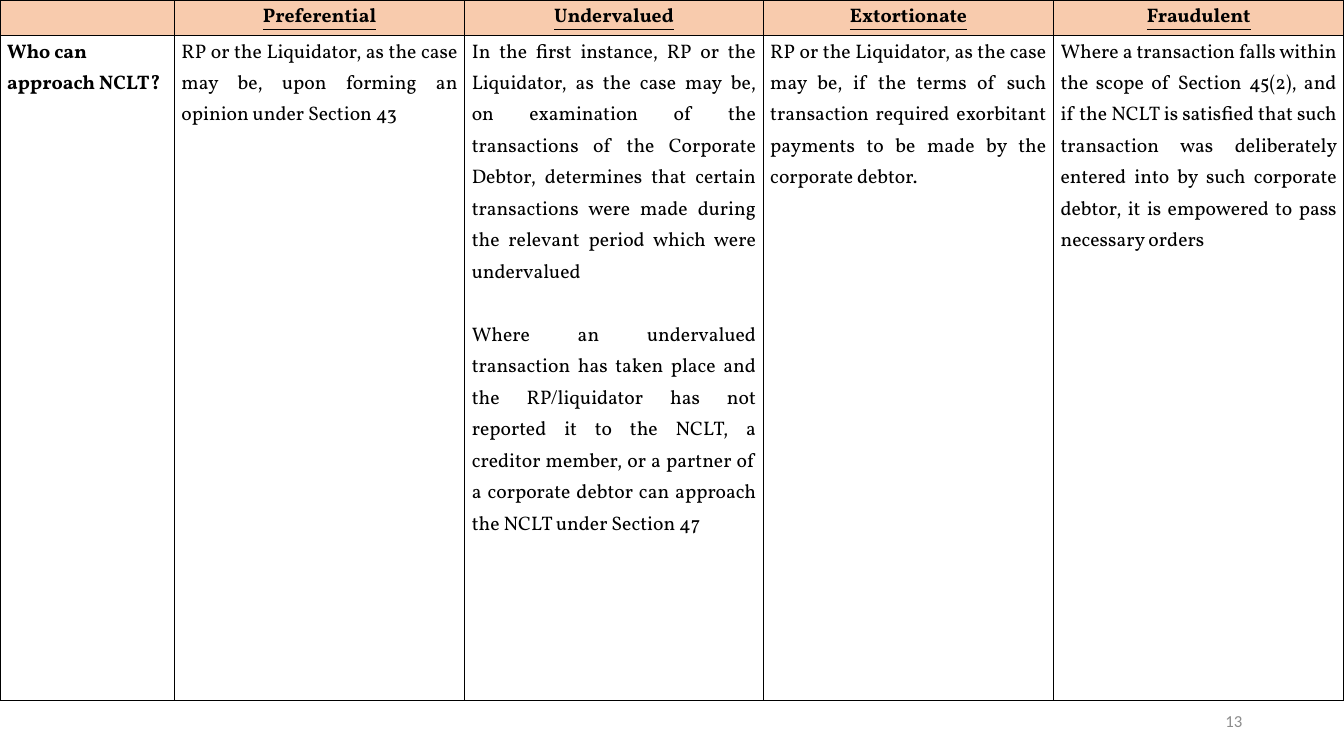
"""Build a slide comparing who can approach the NCLT for each avoidable transaction."""
from lxml.etree import SubElement
from pptx import Presentation
from pptx.dml.color import RGBColor
from pptx.enum.text import MSO_ANCHOR, PP_ALIGN as ALIGN
from pptx.oxml.ns import qn
from pptx.util import Inches, Pt

COLORS = {"header": "F8CBAD", "body": "FFFFFF", "text": "000000",
          "border": "000000", "number": "8C8C8C"}
COL_WIDTHS = [1.73, 2.88, 2.96, 2.88, 2.88]
ROW_HEIGHTS = [0.35, 6.6]
HEADERS = ["", "Preferential", "Undervalued", "Extortionate", "Fraudulent"]
QUESTION = "Who can approach NCLT?"
ANSWERS = [
    ["RP or the Liquidator, as the case may be, upon forming an opinion "
     "under Section 43"],
    ["In the first instance, RP or the Liquidator, as the case may be, on "
     "examination of the transactions of the Corporate Debtor, determines that "
     "certain transactions were made during the relevant period which were "
     "undervalued",
     "Where an undervalued transaction has taken place and the RP/liquidator "
     "has not reported it to the NCLT, a creditor member, or a partner of a "
     "corporate debtor can approach the NCLT under Section 47"],
    ["RP or the Liquidator, as the case may be, if the terms of such "
     "transaction required exorbitant payments to be made by the corporate "
     "debtor."],
    ["Where a transaction falls within the scope of Section 45(2), and if the "
     "NCLT is satisfied that such transaction was deliberately entered into by "
     "such corporate debtor, it is empowered to pass necessary orders"],
]


def rgb(name):
    return RGBColor.from_string(COLORS[name])


def add_run(p, text, font, size, color, bold=False, underline=False):
    r = p.add_run()
    r.text = text
    r.font.name, r.font.size = font, Pt(size)
    r.font.bold, r.font.underline = bold, underline
    r.font.color.rgb = rgb(color)


def set_borders(cell):
    tc_pr = cell._tc.get_or_add_tcPr()
    for i, side in enumerate(("a:lnL", "a:lnR", "a:lnT", "a:lnB")):
        ln = tc_pr.makeelement(qn(side), {"w": str(Pt(1))})
        fill = SubElement(ln, qn("a:solidFill"))
        SubElement(fill, qn("a:srgbClr"), val=COLORS["border"])
        tc_pr.insert(i, ln)


def fill_cell(cell, paragraphs, fill, align, bold=False, underline=False):
    cell.fill.solid()
    cell.fill.fore_color.rgb = rgb(fill)
    cell.margin_left = cell.margin_right = Inches(0.07)
    cell.margin_top = cell.margin_bottom = 0
    set_borders(cell)
    tf = cell.text_frame
    for i, text in enumerate(paragraphs):
        p = tf.add_paragraph() if i else tf.paragraphs[0]
        p.alignment, p.line_spacing = align, 1.15
        if i:
            p.space_before = Pt(22.5)
        if text:
            add_run(p, text, "Vollkorn", 14, "text", bold, underline)


def add_comparison(s):
    table = s.shapes.add_table(2, len(HEADERS), 0, 0, Inches(sum(COL_WIDTHS)),
                               Inches(sum(ROW_HEIGHTS))).table
    for col, width in zip(table.columns, COL_WIDTHS):
        col.width = Inches(width)
    for row, height in zip(table.rows, ROW_HEIGHTS):
        row.height = Inches(height)
    for c, header in enumerate(HEADERS):
        fill_cell(table.cell(0, c), [header], "header", ALIGN.CENTER, True, True)
    fill_cell(table.cell(1, 0), [QUESTION], "body", ALIGN.LEFT, True)
    for c, answer in enumerate(ANSWERS, 1):
        fill_cell(table.cell(1, c), answer, "body", ALIGN.JUSTIFY)


def add_slide_number(s, number):
    tf = s.shapes.add_textbox(Inches(9.42), Inches(6.95), Inches(3),
                              Inches(0.4)).text_frame
    tf.word_wrap = True
    tf.vertical_anchor = MSO_ANCHOR.MIDDLE
    p = tf.paragraphs[0]
    p.alignment = ALIGN.RIGHT
    add_run(p, number, "Calibri", 12, "number")


def main():
    prs = Presentation()
    prs.slide_width, prs.slide_height = Inches(13.33), Inches(7.5)
    s = prs.slides.add_slide(prs.slide_layouts[6])
    add_slide_number(s, "13")
    add_comparison(s)
    prs.save("out.pptx")


if __name__ == "__main__":
    main()
